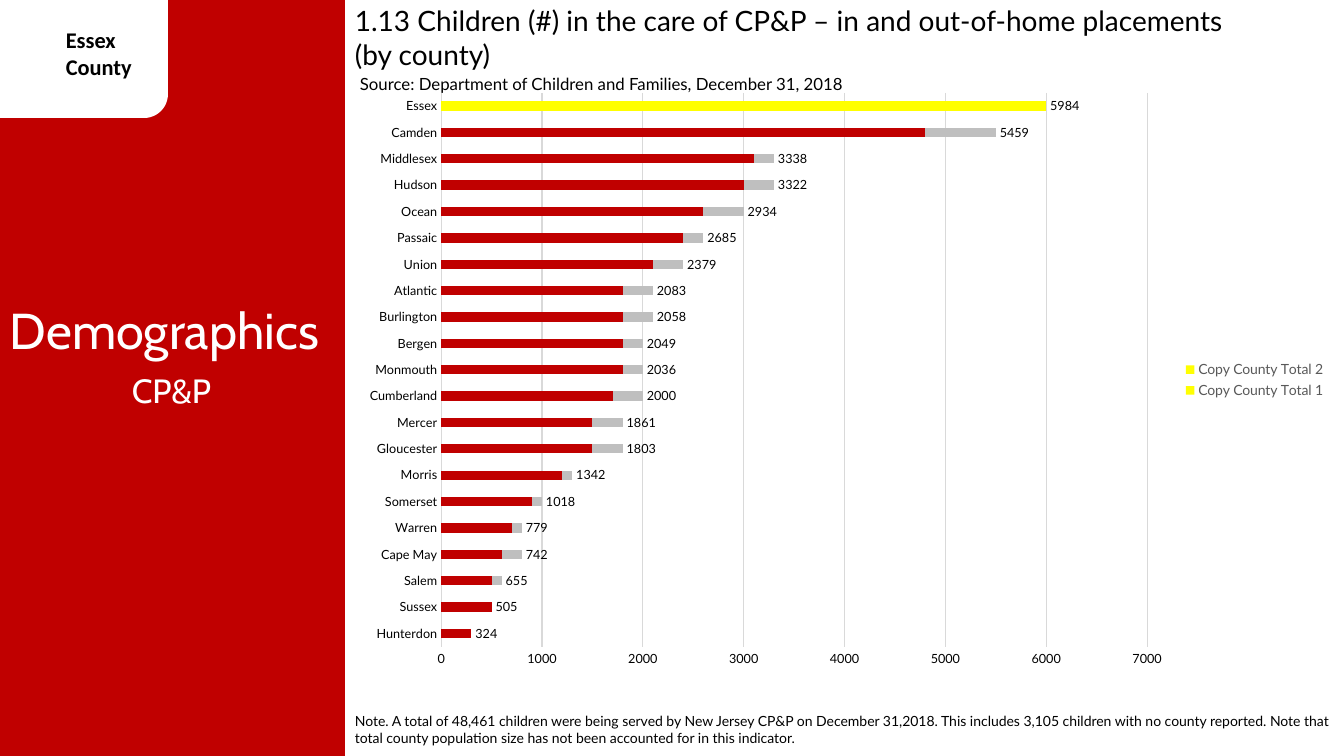
from copy import deepcopy

from lxml.etree import SubElement
from pptx import Presentation
from pptx.chart.data import CategoryChartData
from pptx.dml.color import RGBColor
from pptx.enum.chart import XL_CHART_TYPE, XL_LABEL_POSITION, XL_LEGEND_POSITION, XL_TICK_MARK
from pptx.enum.shapes import MSO_SHAPE
from pptx.enum.text import MSO_ANCHOR, PP_ALIGN
from pptx.oxml import parse_xml
from pptx.oxml.ns import nsdecls, qn
from pptx.util import Pt

EMU_PER_PX = 914400 / 100.8
RED, GRAY, YELLOW, WHITE, BLACK = "C00000", "BFBFBF", "FFFF00", "FFFFFF", "000000"
GRID_GRAY, LEGEND_GRAY = "D9D9D9", "595959"
AXIS_MAXIMUM = 7000
HIDDEN_LEGEND_ENTRIES = (2, 3, 4)

COUNTIES = [
    ("Hunterdon", 300, 0, 324), ("Sussex", 500, 0, 505), ("Salem", 500, 100, 655),
    ("Cape May", 600, 200, 742), ("Warren", 700, 100, 779), ("Somerset", 900, 100, 1018),
    ("Morris", 1200, 100, 1342), ("Gloucester", 1500, 300, 1803), ("Mercer", 1500, 300, 1861),
    ("Cumberland", 1700, 300, 2000), ("Monmouth", 1800, 200, 2036), ("Bergen", 1800, 200, 2049),
    ("Burlington", 1800, 300, 2058), ("Atlantic", 1800, 300, 2083), ("Union", 2100, 300, 2379),
    ("Passaic", 2400, 200, 2685), ("Ocean", 2600, 400, 2934), ("Hudson", 3000, 300, 3322),
    ("Middlesex", 3100, 200, 3338), ("Camden", 4800, 700, 5459), ("Essex", 5000, 1000, 5984),
]


def px(length):
    """Turn whole pixels into EMU."""
    return round(length * EMU_PER_PX)


def color(value):
    """Turn a hex string into a colour."""
    return RGBColor.from_string(value)


def set_font(font, size, fill, name="Lato", bold=False):
    """Format one font."""
    font.size, font.name, font.bold = Pt(size), name, bold
    font.color.rgb = color(fill)


def add_text(slide, box, text, size, fill=BLACK, name="Lato", bold=False,
             align=PP_ALIGN.LEFT, anchor=MSO_ANCHOR.TOP):
    """Add a wrapped text box."""
    frame = slide.shapes.add_textbox(*map(px, box)).text_frame
    frame.word_wrap = True
    frame.vertical_anchor = anchor
    paragraph = frame.paragraphs[0]
    paragraph.alignment = align
    run = paragraph.add_run()
    run.text = text
    set_font(run.font, size, fill, name, bold)


def add_panel(slide, kind, box, fill):
    """Add a plain filled shape."""
    shape = slide.shapes.add_shape(kind, *map(px, box))
    shape.shadow.inherit = False
    shape.fill.solid()
    shape.fill.fore_color.rgb = color(fill)
    shape.line.fill.background()


def add_sidebar(slide, left, top, width, height):
    """Draw the red sidebar with its county tab and section name."""
    add_panel(slide, MSO_SHAPE.RECTANGLE, (left, top, width, height), RED)
    add_panel(slide, MSO_SHAPE.ROUNDED_RECTANGLE, (left - 34, top - 25, 202, 143), WHITE)
    add_text(slide, (left + 56, top + 21, 112, 65), "Essex County", 16, name="Calibri", bold=True)
    add_text(slide, (left, top + 294, width, 72), "Demographics", 36, WHITE, "Cabin")
    add_text(slide, (left + 34, top + 365, width - 70, 50), "CP&P", 24, WHITE, "Cabin",
             align=PP_ALIGN.CENTER)


def format_axes(chart):
    """Style the county axis and the value axis."""
    county_axis, value_axis = chart.category_axis, chart.value_axis
    for axis in (county_axis, value_axis):
        axis.major_tick_mark = axis.minor_tick_mark = XL_TICK_MARK.NONE
        set_font(axis.tick_labels.font, 9, BLACK)
    value_axis.minimum_scale, value_axis.maximum_scale = 0, AXIS_MAXIMUM
    value_axis.major_unit = 1000
    value_axis.format.line.fill.background()
    value_axis.has_major_gridlines = True
    for line in (county_axis.format.line, value_axis.major_gridlines.format.line):
        line.color.rgb = color(GRID_GRAY)
        line.width = Pt(0.75)


def format_series(plot):
    """Color the bars and label the county totals."""
    plot.gap_width, plot.overlap = 182, 100
    plot.vary_by_categories = False
    for series, fill in zip(plot.series, (RED, GRAY, None, YELLOW, YELLOW)):
        if fill:
            series.format.fill.solid()
            series.format.fill.fore_color.rgb = color(fill)
        else:
            series.format.fill.background()
            labels = series.data_labels
            labels.show_value = True
            labels.position = XL_LABEL_POSITION.INSIDE_BASE
            set_font(labels.font, 9, BLACK)


def move_highlight_to_second_axes(plot_area):
    """Put the last two series in a clustered plot on hidden axes."""
    stacked = plot_area.find(qn("c:barChart"))
    clustered = deepcopy(stacked)
    for plot, dropped in ((stacked, slice(3, None)), (clustered, slice(0, 3))):
        for series in plot.findall(qn("c:ser"))[dropped]:
            plot.remove(series)
    clustered.find(qn("c:grouping")).set("val", "clustered")
    stacked.addnext(clustered)
    first_axes = [plot_area.find(qn(tag)) for tag in ("c:catAx", "c:valAx")]
    second_axes = [deepcopy(axis) for axis in first_axes]
    identifiers = ("50010", "50020")
    for axis, own, other in zip(second_axes, identifiers, identifiers[::-1]):
        axis.find(qn("c:axId")).set("val", own)
        axis.find(qn("c:crossAx")).set("val", other)
        axis.find(qn("c:delete")).set("val", "1")
        for gridlines in axis.findall(qn("c:majorGridlines")):
            axis.remove(gridlines)
    second_axes[1].find(qn("c:axPos")).set("val", "t")
    second_axes[1].find(qn("c:crosses")).set("val", "max")
    for reference, identifier in zip(clustered.findall(qn("c:axId")), identifiers):
        reference.set("val", identifier)
    first_axes[1].addnext(second_axes[0])
    second_axes[0].addnext(second_axes[1])


def set_plot_layout(plot_area, **fractions):
    """Fix the inner plot area as fractions of the chart."""
    for layout in plot_area.findall(qn("c:layout")):
        plot_area.remove(layout)
    layout = parse_xml(f"<c:layout {nsdecls('c')}/>")
    manual = SubElement(layout, qn("c:manualLayout"))
    settings = {"layoutTarget": "inner", "xMode": "edge", "yMode": "edge", **fractions}
    for tag, value in settings.items():
        SubElement(manual, qn(f"c:{tag}")).set("val", str(value))
    plot_area.insert(0, layout)


def add_legend(chart):
    """Show a legend for the highlighted county only."""
    chart.has_legend = True
    legend = chart.legend
    legend.position = XL_LEGEND_POSITION.RIGHT
    legend.include_in_layout = False
    set_font(legend.font, 10, LEGEND_GRAY)
    position = chart._chartSpace.find(".//" + qn("c:legendPos"))
    for index in reversed(HIDDEN_LEGEND_ENTRIES):
        position.addnext(parse_xml(
            f'<c:legendEntry {nsdecls("c")}><c:idx val="{index}"/><c:delete val="1"/></c:legendEntry>'))


def add_county_chart(slide, box):
    """Draw the county bars with the highlighted county on top."""
    names, in_home, out_of_home, totals = zip(*COUNTIES)
    highlight = [6000 if name == "Essex" else None for name in names]
    data = CategoryChartData()
    data.categories = names
    for name, values in (("In-Home", in_home), ("Out-of-Home Placement", out_of_home),
                         ("Total", totals), ("Copy County Total 1", highlight),
                         ("Copy County Total 2", highlight)):
        data.add_series(name, values)
    chart = slide.shapes.add_chart(XL_CHART_TYPE.BAR_STACKED, *map(px, box), data).chart
    chart.has_title = False
    set_font(chart.font, 10, BLACK, "Calibri")
    format_axes(chart)
    format_series(chart.plots[0])
    add_legend(chart)
    plot_area = chart._chartSpace.find(".//" + qn("c:plotArea"))
    move_highlight_to_second_axes(plot_area)
    set_plot_layout(plot_area, x=0.0925, y=0.02, w=0.716, h=0.926)


def add_content(slide, left, top, width, height):
    """Place the heading, the source, the chart and the note."""
    add_text(slide, (left, top - 1, 907, 78),
             "1.13 Children (#) in the care of CP&P – in and out-of-home placements (by county)", 20)
    add_text(slide, (left + 5, top + 69, 711, 30),
             "Source: Department of Children and Families, December 31, 2018", 12)
    add_county_chart(slide, (left + 5, top + 81, 986, 598))
    add_text(slide, (left, top + height - 54, width, 54),
             "Note. A total of 48,461 children were being served by New Jersey CP&P on December 31,2018. "
             "This includes 3,105 children with no county reported. Note that total county population "
             "size has not been accounted for in this indicator.", 10, anchor=MSO_ANCHOR.MIDDLE)


def main():
    """Build and save the slide."""
    presentation = Presentation()
    presentation.slide_width, presentation.slide_height = px(1344), px(756)
    slide = presentation.slides.add_slide(presentation.slide_layouts[6])
    add_sidebar(slide, 0, 0, 345, 756)
    add_content(slide, 345, 0, 999, 756)
    presentation.save("out.pptx")


if __name__ == "__main__":
    main()
